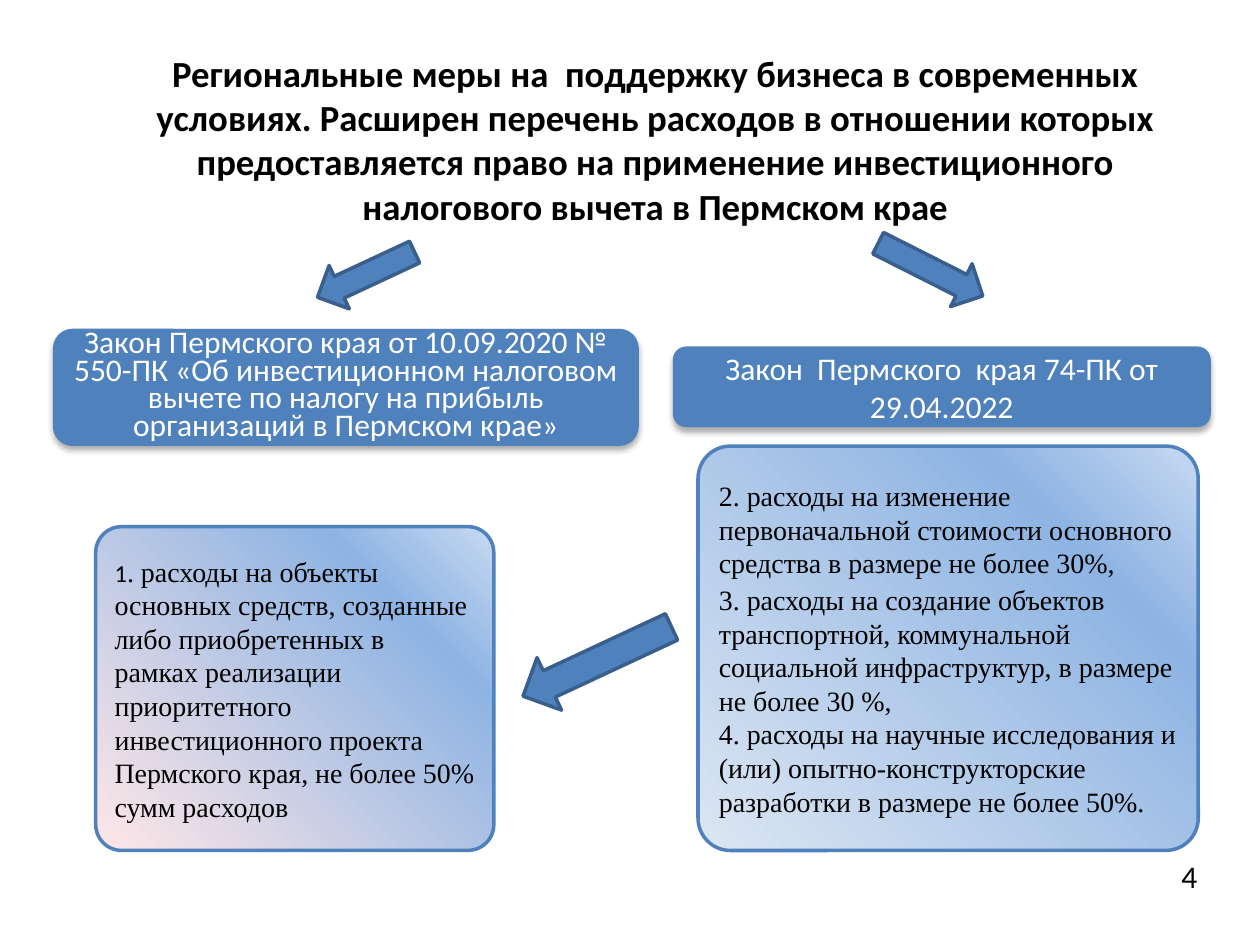
from pptx import Presentation
from pptx.dml.color import RGBColor
from pptx.enum.shapes import MSO_SHAPE
from pptx.enum.text import MSO_ANCHOR, PP_ALIGN
from pptx.oxml import parse_xml
from pptx.oxml.ns import nsdecls, qn
from pptx.util import Inches, Pt

ROUND, ARROW = MSO_SHAPE.ROUNDED_RECTANGLE, MSO_SHAPE.RIGHT_ARROW
MIDDLE = MSO_ANCHOR.MIDDLE
CENTER, LEFT = PP_ALIGN.CENTER, PP_ALIGN.LEFT

COLORS = {
    "text": "000000",
    "white": "FFFFFF",
    "blue": "4F81BD",
    "arrow_line": "3A5F8C",
    "glow": "C6D9F1",
    "mid": "8EB4E3",
    "pink": "FFE7E7",
    "pale": "DCE6F2",
}
SANS, SERIF = "Calibri", "Times New Roman"
TITLE_FONT = {"name": SANS, "size": Pt(21), "bold": True}
LABEL_FONT = {"name": SANS, "size": Pt(18)}
NUMBER_FONT = {"name": SANS, "size": Pt(14)}
BODY_FONT = {"name": SERIF, "size": Pt(16)}


def rgb(key):
    """Return the palette colour for a key."""
    return RGBColor.from_string(COLORS[key])


def set_attrs(obj, values):
    """Set every attribute in a dict of format values."""
    for name, value in values.items():
        setattr(obj, name, value)


def write(sp, paragraphs, color="text", inset=(0.09, 0.04), **para_format):
    """Fill a shape with paragraphs, each a list of (text, font) runs."""
    tf = sp.text_frame
    dx, dy = map(Inches, inset)
    set_attrs(tf, {"word_wrap": True, "vertical_anchor": MIDDLE,
                   "margin_left": dx, "margin_right": dx,
                   "margin_top": dy, "margin_bottom": dy})
    for i, runs in enumerate(paragraphs):
        p = tf.paragraphs[0] if i == 0 else tf.add_paragraph()
        set_attrs(p, para_format)
        for text, font in runs:
            r = p.add_run()
            r.text = text
            set_attrs(r.font, font)
            r.font.color.rgb = rgb(color)


def add_box(s, kind, box, fill=None, line=None):
    """Add a shape without shadow, with an optional fill and outline."""
    sp = s.shapes.add_shape(kind, *map(Inches, box))
    sp.shadow.inherit = False
    if fill:
        sp.fill.solid()
        sp.fill.fore_color.rgb = rgb(fill)
    else:
        sp.fill.background()
    if line:
        sp.line.color.rgb = rgb(line)
        sp.line.width = Pt(2)
    else:
        sp.line.fill.background()
    return sp


def add_title(s, box, text):
    """Add the slide heading."""
    write(add_box(s, ROUND, box), [[(text, TITLE_FONT)]], alignment=CENTER)


def add_law(s, box, text, **para_format):
    """Add a blue law banner with a soft shadow below it."""
    sp = add_box(s, ROUND, box, "blue")
    sp._element.spPr.find(qn("a:effectLst")).append(parse_xml(
        f'<a:outerShdw {nsdecls("a")} blurRad="{Pt(3.5)}" dist="{Pt(2.2)}" '
        'dir="5400000" rotWithShape="0"><a:srgbClr val="000000">'
        '<a:alpha val="32000"/></a:srgbClr></a:outerShdw>'))
    write(sp, [[(text, LABEL_FONT)]], "white", alignment=CENTER, **para_format)


def add_card(s, box, end, paragraphs, **para_format):
    """Add an expense card whose gradient spreads from the top right corner."""
    sp = add_box(s, ROUND, box, "mid", "blue")
    sp.adjustments[0] = 0.08
    stops = "".join(
        f'<a:gs pos="{pos * 1000}"><a:srgbClr val="{COLORS[key]}"/></a:gs>'
        for pos, key in ((0, "glow"), (24, "mid"), (100, end)))
    spPr = sp._element.spPr
    spPr.replace(spPr.find(qn("a:solidFill")), parse_xml(
        f'<a:gradFill {nsdecls("a")} rotWithShape="1"><a:gsLst>{stops}</a:gsLst>'
        '<a:path path="circle"><a:fillToRect l="100000" b="100000"/></a:path>'
        '</a:gradFill>'))
    write(sp, paragraphs, alignment=LEFT, **para_format)
    return sp


def add_arrow(s, box, angle):
    """Add a block arrow turned by an angle."""
    add_box(s, ARROW, box, "blue", "arrow_line").rotation = angle


def add_page_number(s, box, number):
    """Add the page number."""
    sp = s.shapes.add_textbox(*map(Inches, box))
    write(sp, [[(number, LABEL_FONT)]], inset=(0.1, 0.05),
          alignment=CENTER, line_spacing=Pt(21))


def main():
    """Build the slide and save it."""
    prs = Presentation()
    prs.slide_width, prs.slide_height = Inches(10), Inches(7.5)
    s = prs.slides.add_slide(prs.slide_layouts[6])

    add_title(s, (0.69, 0.25, 9.02, 1.71),
              "Региональные меры на  поддержку бизнеса в современных условиях. "
              "Расширен перечень расходов в отношении которых предоставляется "
              "право на применение инвестиционного налогового вычета в "
              "Пермском крае")
    add_law(s, (0.42, 2.61, 4.65, 0.93),
            "Закон Пермского края от 10.09.2020 № 550-ПК «Об инвестиционном "
            "налоговом вычете по налогу на прибыль организаций в Пермском крае»",
            line_spacing=Pt(15.8))
    add_law(s, (5.34, 2.75, 4.27, 0.64),
            "Закон  Пермского  края 74-ПК от 29.04.2022")
    add_card(s, (0.76, 4.18, 3.16, 2.57), "pink", [[
        ("1", NUMBER_FONT),
        (". расходы на объекты основных средств, созданные либо приобретенных "
         "в рамках реализации приоритетного инвестиционного проекта Пермского "
         "края, не более 50% сумм расходов", BODY_FONT)]])
    expenses = (
        "2. расходы на изменение первоначальной стоимости основного средства "
        "в размере не более 30%,",
        "3. расходы на создание объектов транспортной, коммунальной "
        "социальной инфраструктур, в размере не более 30 %,",
        "4. расходы на научные исследования и (или) "
        "опытно-конструкторские разработки в размере не более 50%.")
    card = add_card(s, (5.54, 3.54, 3.97, 3.21), "pale",
                    [[(text, BODY_FONT)] for text in expenses])
    card.text_frame.paragraphs[0].space_after = Pt(1.8)

    for box, angle in (((2.48, 1.99, 0.85, 0.38), 155),
                       ((6.92, 1.95, 0.93, 0.38), 26.8),
                       ((4.09, 5.02, 1.3, 0.46), 155)):
        add_arrow(s, box, angle)
    add_page_number(s, (9.1, 6.61, 0.68, 0.69), "4")
    prs.save("out.pptx")


if __name__ == "__main__":
    main()
